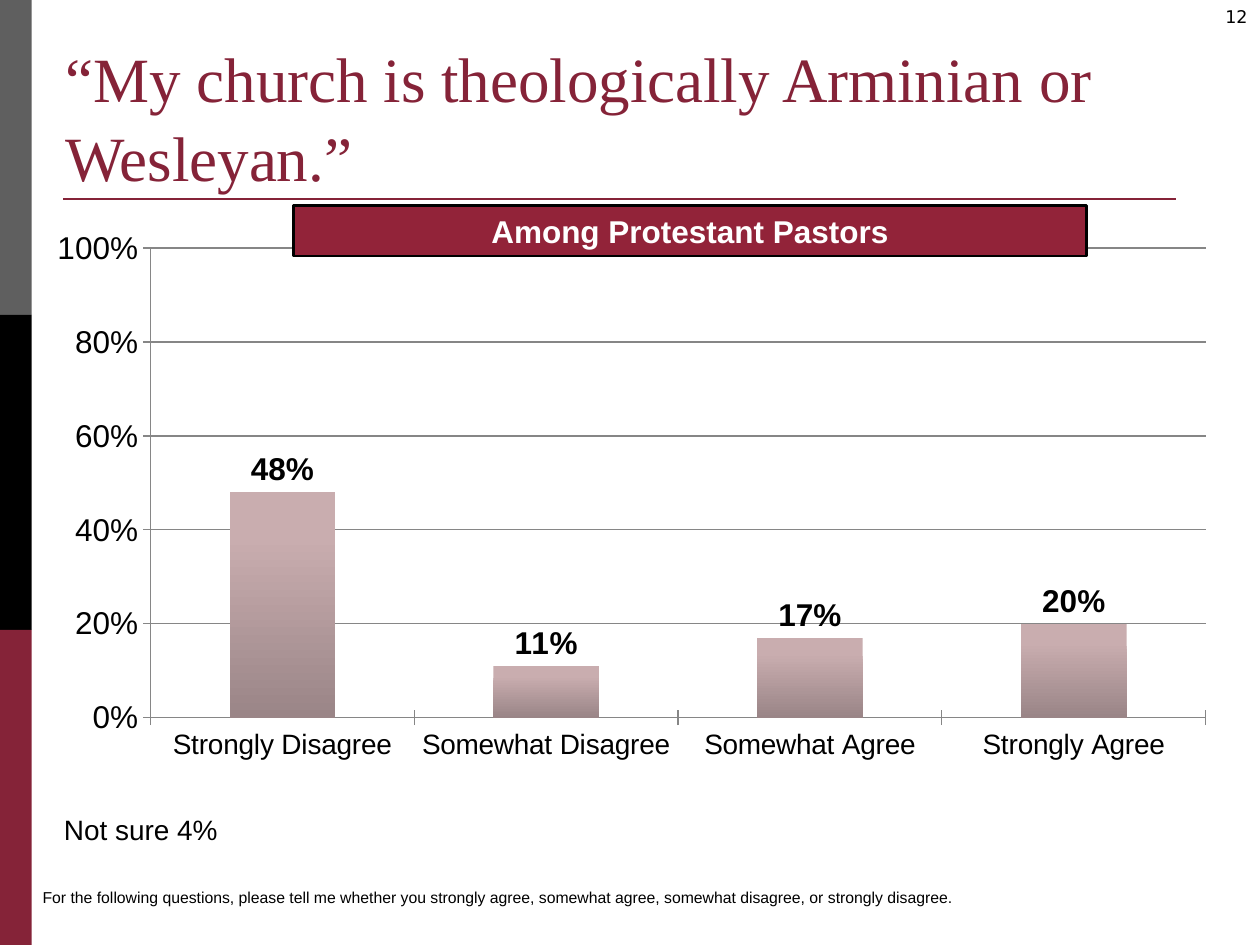
from lxml import etree
from pptx import Presentation
from pptx.chart.data import CategoryChartData
from pptx.dml.color import RGBColor
from pptx.enum.chart import XL_CHART_TYPE, XL_LABEL_POSITION, XL_TICK_MARK
from pptx.enum.shapes import MSO_CONNECTOR, MSO_SHAPE
from pptx.enum.text import MSO_ANCHOR, PP_ALIGN
from pptx.oxml.ns import qn
from pptx.util import Cm, Pt

MAROON = "852338"
BLACK = "000000"
GREY = "868686"
ANSWERS = {
    "Strongly Disagree": 0.48,
    "Somewhat Disagree": 0.11,
    "Somewhat Agree": 0.17,
    "Strongly Agree": 0.2,
}


def colour(code):
    """Turn a hex string into a colour."""
    return RGBColor.from_string(code)


def style_font(font, size, code=BLACK, name="Arial", bold=False):
    """Set face, size, colour and weight of a font."""
    font.name = name
    font.size = Pt(size)
    font.bold = bold
    font.color.rgb = colour(code)


def write(shape, text, size, align=PP_ALIGN.LEFT, anchor=MSO_ANCHOR.TOP, **look):
    """Write one paragraph into a shape and return it."""
    frame = shape.text_frame
    frame.word_wrap = True
    frame.vertical_anchor = anchor
    para = frame.paragraphs[0]
    para.alignment = align
    span = para.add_run()
    span.text = text
    style_font(span.font, size, **look)
    return para


def add_text(page, box, text, size, **look):
    """Add a text box at left, top, width, height in centimetres."""
    shape = page.shapes.add_textbox(*map(Cm, box))
    return write(shape, text, size, **look)


def add_block(page, box, fill):
    """Add a plain filled rectangle without outline."""
    block = page.shapes.add_shape(MSO_SHAPE.RECTANGLE, *map(Cm, box))
    block.shadow.inherit = False
    block.fill.solid()
    block.fill.fore_color.rgb = colour(fill)
    block.line.fill.background()
    return block


def add_side_band(page, left, top, width, height):
    """Stack three equal colour blocks down the box."""
    fills = ("5F5F5F", BLACK, MAROON)
    part = height / len(fills)
    for index, fill in enumerate(fills):
        add_block(page, (left, top + index * part, width, part), fill)


def add_heading(page, left, top, width, height):
    """Place the title with the rule under it."""
    para = add_text(
        page, (left, top, width, height),
        "“My church is theologically Arminian or Wesleyan.”", 36,
        anchor=MSO_ANCHOR.BOTTOM, code=MAROON, name="Times New Roman")
    para.line_spacing = 1.05
    start, level = Cm(left + 0.2), Cm(top + height - 0.03)
    rule = page.shapes.add_connector(
        MSO_CONNECTOR.STRAIGHT, start, level, start + Cm(22.43), level)
    rule.line.color.rgb = colour(MAROON)
    rule.line.width = Pt(1.5)
    etree.SubElement(rule._element.spPr, qn("a:effectLst"))


def set_plot_area(chart, **fractions):
    """Fix the inner plot area as fractions of the chart."""
    area = chart._chartSpace.chart.plotArea
    for old in area.findall(qn("c:layout")):
        area.remove(old)
    layout = etree.Element(qn("c:layout"))
    area.insert(0, layout)
    manual = etree.SubElement(layout, qn("c:manualLayout"))
    settings = {"layoutTarget": "inner", "xMode": "edge", "yMode": "edge", **fractions}
    for tag, value in settings.items():
        etree.SubElement(manual, qn(f"c:{tag}")).set("val", str(value))


def style_axis(axis, size):
    """Give an axis its text, line and crossing ticks."""
    style_font(axis.tick_labels.font, size)
    axis.major_tick_mark = XL_TICK_MARK.CROSS
    axis.minor_tick_mark = XL_TICK_MARK.NONE
    axis.format.line.color.rgb = colour(GREY)


def add_answer_chart(page, left, top, width, height):
    """Draw the share of each answer as columns."""
    data = CategoryChartData(number_format="0%")
    data.categories = list(ANSWERS)
    data.add_series("Series 1", list(ANSWERS.values()))
    chart = page.shapes.add_chart(
        XL_CHART_TYPE.COLUMN_CLUSTERED, *map(Cm, (left, top, width, height)), data).chart
    chart.has_title = False
    chart.has_legend = False
    style_font(chart.font, 18)
    set_plot_area(chart, x=0.095, y=0.054, w=0.889, h=0.807)

    style_axis(chart.category_axis, 16)
    scale = chart.value_axis
    style_axis(scale, 18)
    scale.minimum_scale, scale.maximum_scale, scale.major_unit = 0, 1, 0.2
    scale.tick_labels.number_format = "0%"
    scale.tick_labels.number_format_is_linked = False
    scale.has_major_gridlines = True
    scale.major_gridlines.format.line.color.rgb = colour(GREY)

    plot = chart.plots[0]
    plot.gap_width = 150
    plot.vary_by_categories = False
    fill = plot.series[0].format.fill
    fill.gradient()
    fill.gradient_angle = 270
    for stop, position, code in zip(fill.gradient_stops, (0.2, 1), ("C9ADAF", "9A8587")):
        stop.position = position
        stop.color.rgb = colour(code)

    plot.has_data_labels = True
    labels = plot.data_labels
    labels.show_value = True
    labels.number_format = "0%"
    labels.number_format_is_linked = False
    labels.position = XL_LABEL_POSITION.OUTSIDE_END
    style_font(labels.font, 18, bold=True)


def add_banner(page, left, top, width, height):
    """Place the outlined label naming the group asked."""
    banner = add_block(page, (left, top, width, height), "922339")
    banner.line.color.rgb = colour(BLACK)
    banner.line.width = Pt(1.5)
    write(banner, "Among Protestant Pastors", 18, align=PP_ALIGN.CENTER,
          anchor=MSO_ANCHOR.MIDDLE, code="FFFFFF", bold=True)


def add_notes_below(page, left, top):
    """Place the remaining share and the question wording."""
    add_text(page, (left + 0.43, top, 4.47, 0.94), "Not sure 4%", 16)
    add_text(
        page, (left, top + 1.52, 19.46, 0.64),
        "For the following questions, please tell me whether you strongly agree, "
        "somewhat agree, somewhat disagree, or strongly disagree.", 9)


def main():
    """Build the slide and save it."""
    deck = Presentation()
    deck.slide_width, deck.slide_height = Cm(25.4), Cm(19.05)
    page = deck.slides.add_slide(deck.slide_layouts[6])
    add_side_band(page, 0, 0, 0.64, 19.05)
    add_text(page, (24.13, 0, 1.27, 0.84), "12", 10,
             align=PP_ALIGN.RIGHT, name="DejaVu Sans")
    add_heading(page, 1.07, 0.69, 23.77, 3.35)
    add_answer_chart(page, 0.76, 4.37, 23.93, 11.73)
    add_notes_below(page, 0.61, 16.26)
    add_banner(page, 5.92, 4.14, 15.98, 1.02)
    deck.save("out.pptx")


if __name__ == "__main__":
    main()
